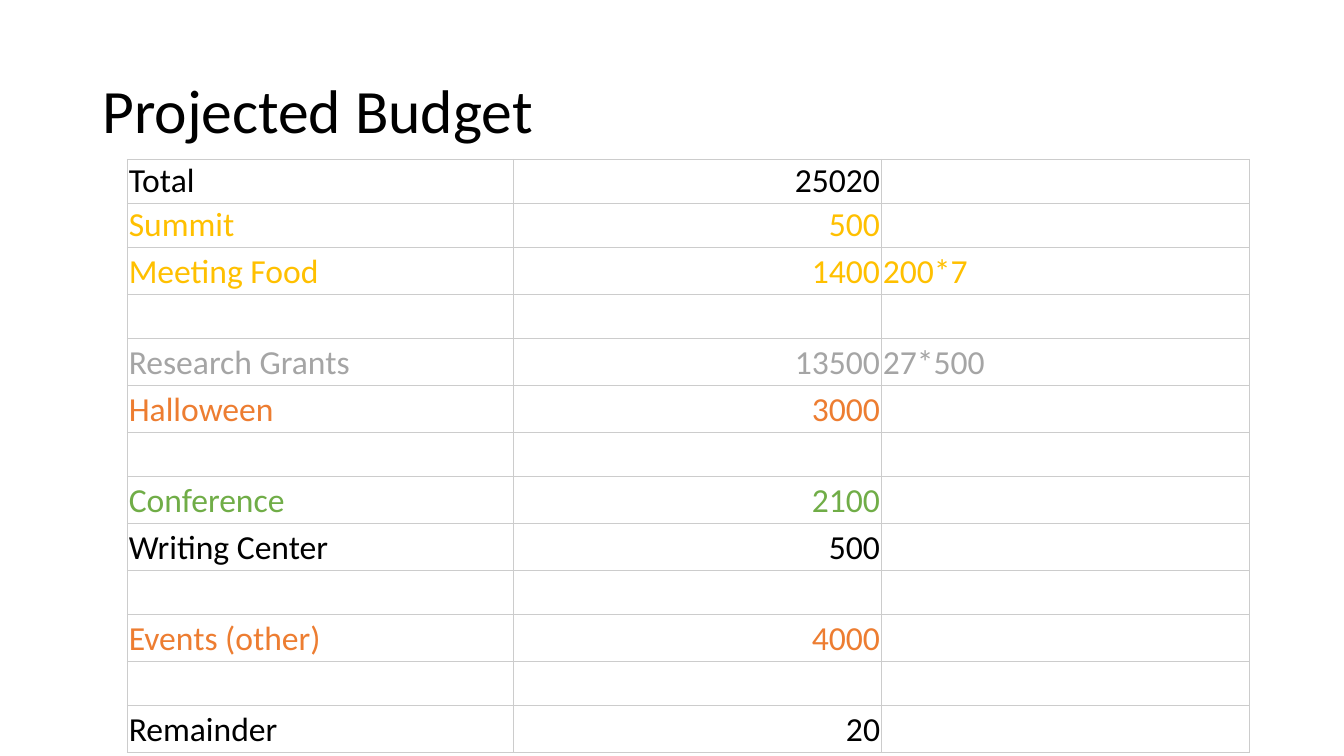
from lxml import etree
from pptx import Presentation
from pptx.dml.color import RGBColor
from pptx.enum.text import MSO_ANCHOR, PP_ALIGN
from pptx.oxml.ns import qn
from pptx.util import Pt

MIDDLE, BOTTOM = MSO_ANCHOR.MIDDLE, MSO_ANCHOR.BOTTOM
LEFT, RIGHT = PP_ALIGN.LEFT, PP_ALIGN.RIGHT

TITLE = "Projected Budget"
FONT = "Calibri"
COLORS = {
    "black": "000000", "gold": "FFC000", "gray": "A5A5A5",
    "orange": "ED7D31", "green": "70AD47", "rule": "CCCCCC",
}
LOW, HIGH = 31.4, 33.6
BLANK = ("", "", "", "black", LOW)
# item, amount, note, color, row height
BUDGET = [
    ("Total", "25020", "", "black", LOW),
    ("Summit", "500", "", "gold", LOW),
    ("Meeting Food", "1400", "200*7", "gold", HIGH),
    BLANK,
    ("Research Grants", "13500", "27*500", "gray", HIGH),
    ("Halloween", "3000", "", "orange", HIGH),
    BLANK,
    ("Conference", "2100", "", "green", HIGH),
    ("Writing Center", "500", "", "black", HIGH),
    BLANK,
    ("Events (other)", "4000", "", "orange", HIGH),
    BLANK,
    ("Remainder", "20", "", "black", HIGH),
]
WIDTHS = [275.8, 262.8, 262.8]
ALIGNS = [LEFT, RIGHT, LEFT]
INSET = Pt(1)


def write(para, text, size, color):
    para.text = text
    for run in para.runs:
        run.font.name = FONT
        run.font.size = Pt(size)
        run.font.color.rgb = RGBColor.from_string(COLORS[color])


def add_title(slide):
    box = slide.shapes.add_textbox(Pt(66), Pt(28.8), Pt(828), Pt(104.4))
    frame = box.text_frame
    frame.word_wrap = True
    frame.vertical_anchor = MIDDLE
    para = frame.paragraphs[0]
    write(para, TITLE, 44, "black")
    para.line_spacing = 0.9


def add_rules(cell):
    """Draw a thin line on all four sides of a cell."""
    props = cell._tc.get_or_add_tcPr()
    for side in ("lnL", "lnR", "lnT", "lnB"):
        line = etree.SubElement(props, qn(f"a:{side}"), w=str(Pt(0.75)))
        fill = etree.SubElement(line, qn("a:solidFill"))
        etree.SubElement(fill, qn("a:srgbClr"), val=COLORS["rule"])


def fill_cell(cell, text, color, align):
    cell.margin_left = cell.margin_right = INSET
    cell.margin_top = cell.margin_bottom = INSET
    cell.vertical_anchor = BOTTOM
    add_rules(cell)
    cell.fill.background()
    para = cell.text_frame.paragraphs[0]
    para.alignment = align
    para.font.size = Pt(24)
    write(para, text, 24, color)


def add_budget(slide):
    total = sum(row[-1] for row in BUDGET)
    table = slide.shapes.add_table(
        len(BUDGET), len(WIDTHS), Pt(91), Pt(113.8),
        Pt(sum(WIDTHS)), Pt(total)).table
    table.first_row = table.horz_banding = False
    for col, width in zip(table.columns, WIDTHS):
        col.width = Pt(width)
    for row, (*texts, color, height) in zip(table.rows, BUDGET):
        row.height = Pt(height)
        for cell, text, align in zip(row.cells, texts, ALIGNS):
            fill_cell(cell, text, color, align)


def main():
    deck = Presentation()
    deck.slide_width, deck.slide_height = Pt(960), Pt(540)
    slide = deck.slides.add_slide(deck.slide_layouts[6])
    add_title(slide)
    add_budget(slide)
    deck.save("out.pptx")


if __name__ == "__main__":
    main()
